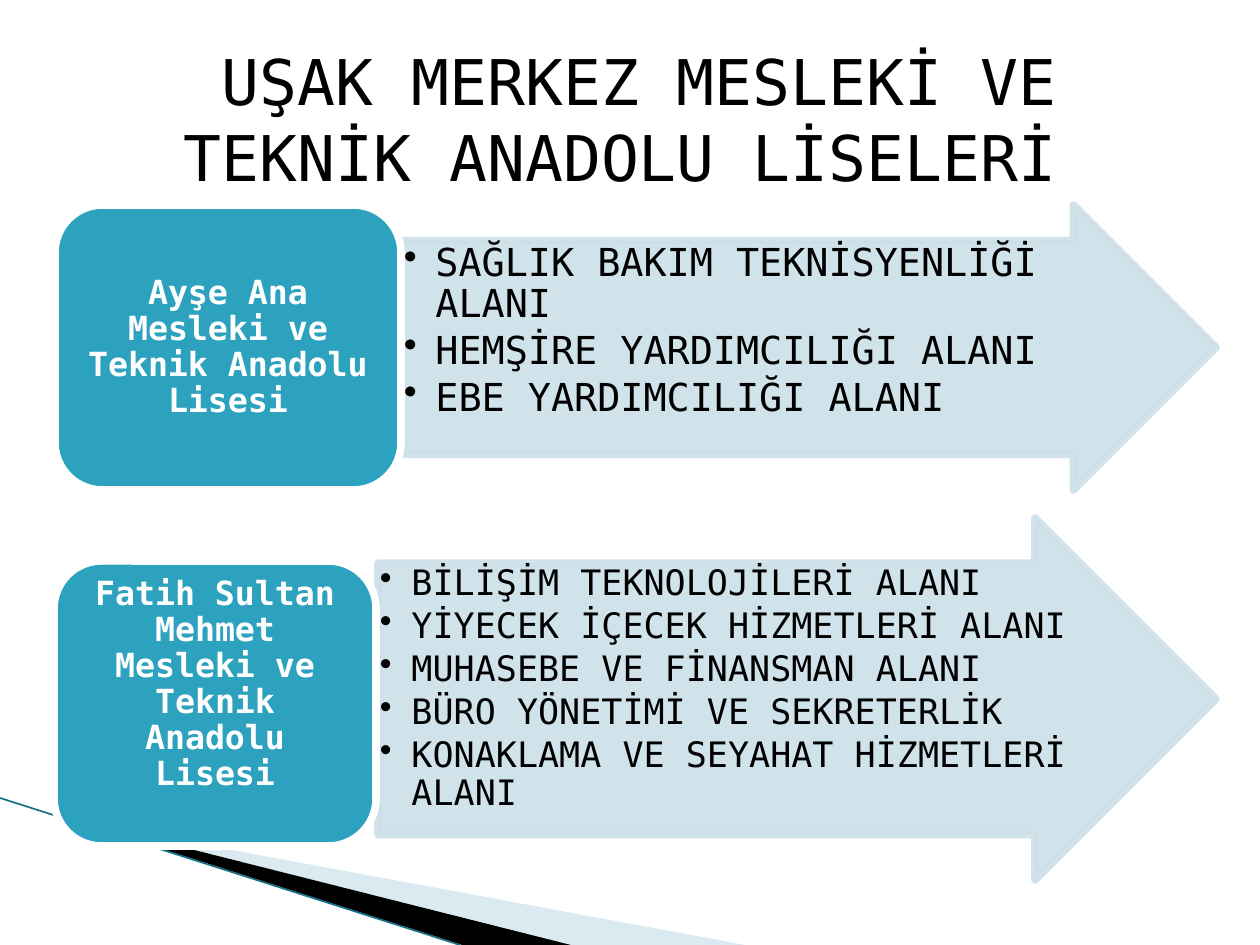
"""Build the slide that lists the vocational schools of Uşak and their fields."""
from dataclasses import dataclass

import lxml.etree
import pptx
import pptx.dml.color
import pptx.enum.shapes
import pptx.enum.text
import pptx.oxml.ns
import pptx.util

EMU_PER_PX = 914400 / 126
ANCHOR = pptx.enum.text.MSO_ANCHOR
ALIGN = pptx.enum.text.PP_ALIGN
PRESET = pptx.enum.shapes.MSO_SHAPE


@dataclass(frozen=True)
class Theme:
    font: str = "DejaVu Sans Mono"
    text: str = "000000"
    card: str = "2DA2BF"
    card_text: str = "FFFFFF"
    arrow: str = "CDE0E8"
    pale_wedge: str = "A0CBDC"
    dark_wedge: str = "000000"
    edge: str = "17708A"
    title_size: int = 36
    card_size: int = 19
    outline: float = 4.33
    edge_width: float = 0.95


@dataclass(frozen=True)
class Box:
    left: int
    top: int
    width: int
    height: int

    def emu(self) -> list[int]:
        return [px(value) for value in (self.left, self.top, self.width, self.height)]


@dataclass(frozen=True)
class School:
    name: str
    fields: tuple[str, ...]
    card: Box
    arrow: Box
    field_size: int
    name_anchor: ANCHOR


@dataclass(frozen=True)
class Wedge:
    points: tuple[tuple[int, int], ...]
    color: str
    opacity: int


THEME = Theme()
WEDGES = (
    Wedge(((69, 820), (745, 945), (573, 945), (69, 819)), THEME.pale_wedge, 40),
    Wedge(((67, 818), (571, 945), (462, 945), (68, 819)), THEME.dark_wedge, 100),
)
SCHOOLS = (
    School(
        "Ayşe Ana Mesleki ve Teknik Anadolu Lisesi",
        ("SAĞLIK BAKIM TEKNİSYENLİĞİ ALANI", "HEMŞİRE YARDIMCILIĞI ALANI",
         "EBE YARDIMCILIĞI ALANI"),
        Box(55, 205, 346, 285), Box(402, 205, 814, 285), 22, ANCHOR.MIDDLE,
    ),
    School(
        "Fatih Sultan Mehmet Mesleki ve Teknik Anadolu Lisesi",
        ("BİLİŞİM TEKNOLOJİLERİ ALANI", "YİYECEK İÇECEK HİZMETLERİ ALANI",
         "MUHASEBE VE FİNANSMAN ALANI", "BÜRO YÖNETİMİ VE SEKRETERLİK",
         "KONAKLAMA VE SEYAHAT HİZMETLERİ ALANI"),
        Box(54, 561, 322, 285), Box(378, 518, 838, 362), 20, ANCHOR.TOP,
    ),
)


def px(value: int) -> int:
    return round(value * EMU_PER_PX)


def paint(color_format, color: str, opacity: int = 100) -> None:
    color_format.solid()
    color_format.fore_color.rgb = pptx.dml.color.RGBColor.from_string(color)
    if opacity < 100:
        node = color_format.fore_color._xFill[0]
        alpha = lxml.etree.SubElement(node, pptx.oxml.ns.qn("a:alpha"))
        alpha.set("val", str(opacity * 1000))


def add_text(slide, box: Box, lines: tuple[str, ...], *, size: int, color: str = THEME.text,
             bold: bool = False, align: ALIGN = ALIGN.LEFT, anchor: ANCHOR = ANCHOR.TOP,
             inset: tuple[int, int] = (13, 6), spacing: float = 1.0,
             bullets: bool = False) -> None:
    frame = slide.shapes.add_textbox(*box.emu()).text_frame
    frame.word_wrap = True
    frame.vertical_anchor = anchor
    frame.margin_left = frame.margin_right = px(inset[0])
    frame.margin_top = frame.margin_bottom = px(inset[1])
    for index, line in enumerate(lines):
        paragraph = frame.paragraphs[0] if index == 0 else frame.add_paragraph()
        paragraph.alignment = align
        paragraph.line_spacing = spacing
        if bullets:
            paragraph.space_after = pptx.util.Pt(3)
            properties = paragraph._p.get_or_add_pPr()
            properties.set("marL", str(pptx.util.Inches(0.25)))
            properties.set("indent", str(-pptx.util.Inches(0.25)))
            bullet = lxml.etree.SubElement(properties, pptx.oxml.ns.qn("a:buChar"))
            bullet.set("char", "•")
        run = paragraph.add_run()
        run.text = line
        run.font.name = THEME.font
        run.font.size = pptx.util.Pt(size)
        run.font.bold = bold
        run.font.color.rgb = pptx.dml.color.RGBColor.from_string(color)


def add_panel(slide, preset: PRESET, box: Box, fill: str, line: str, opacity: int = 100):
    shape = slide.shapes.add_shape(preset, *box.emu())
    shape.shadow.inherit = False
    paint(shape.fill, fill, opacity)
    paint(shape.line.fill, line, opacity)
    shape.line.width = pptx.util.Pt(THEME.outline)
    return shape


def add_wedge(slide, wedge: Wedge) -> None:
    builder = slide.shapes.build_freeform(*wedge.points[0], scale=EMU_PER_PX)
    builder.add_line_segments(wedge.points[1:], close=True)
    shape = builder.convert_to_shape()
    shape.shadow.inherit = False
    paint(shape.fill, wedge.color, wedge.opacity)
    shape.line.fill.background()


def add_edge(slide) -> None:
    edge = slide.shapes.add_connector(
        pptx.enum.shapes.MSO_CONNECTOR.STRAIGHT, px(0), px(798), px(460), px(945))
    paint(edge.line.fill, THEME.edge)
    edge.line.width = pptx.util.Pt(THEME.edge_width)
    lxml.etree.SubElement(edge._element.spPr, pptx.oxml.ns.qn("a:effectLst"))


def add_school(slide, school: School) -> None:
    arrow, card = school.arrow, school.card
    shape = add_panel(slide, PRESET.RIGHT_ARROW, arrow, THEME.arrow, THEME.arrow, 90)
    shape.adjustments[0] = 0.75
    shape.adjustments[1] = 0.5
    shaft = Box(arrow.left, arrow.top + round(arrow.height / 8),
                arrow.width - round(arrow.height * 3 / 8), round(arrow.height * 3 / 4))
    add_text(slide, shaft, school.fields, size=school.field_size, inset=(2, 2),
             spacing=0.9, bullets=True)
    add_panel(slide, PRESET.ROUNDED_RECTANGLE, card, THEME.card, THEME.card_text)
    label = Box(card.left + 14, card.top + 14, card.width - 28, card.height - 28)
    add_text(slide, label, (school.name,), size=THEME.card_size, color=THEME.card_text,
             bold=True, align=ALIGN.CENTER, anchor=school.name_anchor, inset=(10, 2),
             spacing=0.9)


def main() -> None:
    presentation = pptx.Presentation()
    presentation.slide_width = px(1260)
    presentation.slide_height = px(945)
    slide = presentation.slides.add_slide(presentation.slide_layouts[6])
    for wedge in WEDGES:
        add_wedge(slide, wedge)
    add_edge(slide)
    for school in SCHOOLS:
        add_school(slide, school)
    add_text(slide, Box(94, 37, 1052, 165),
             (" UŞAK MERKEZ MESLEKİ VE TEKNİK ANADOLU LİSELERİ",),
             size=THEME.title_size, align=ALIGN.CENTER)
    presentation.save("out.pptx")


if __name__ == "__main__":
    main()
